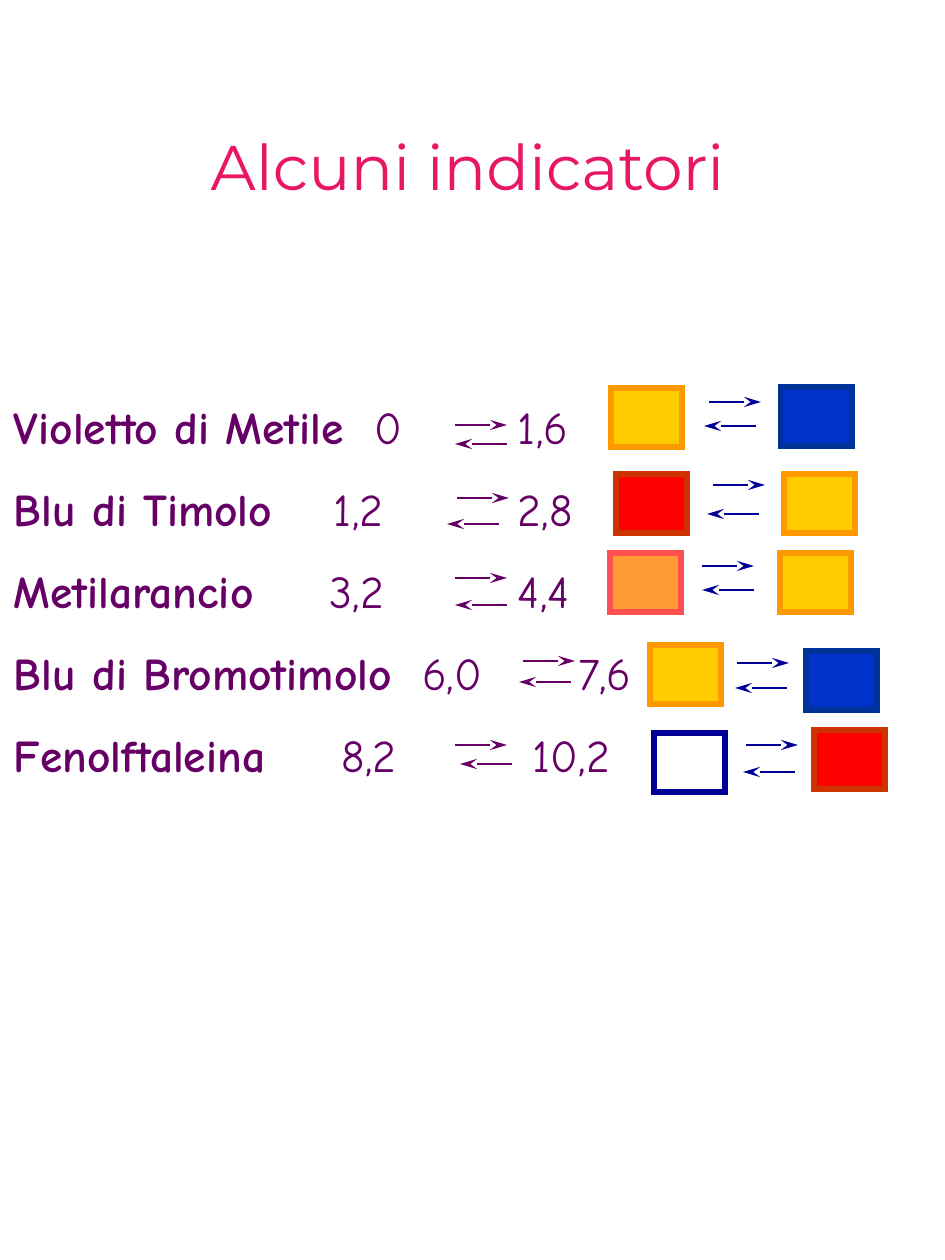
import dataclasses

import pptx
import pptx.dml.color
import pptx.enum.shapes
import pptx.enum.text
import pptx.oxml.ns
import pptx.util
from lxml import etree

EMU_PER_PX = 914400 / 126
BOX_SIZE = (71, 59)
ARROW_LENGTH = 52


@dataclasses.dataclass(frozen=True)
class Theme:
    title_font: str = "Montserrat"
    body_font: str = "Comic Neue"
    title_size: int = 36
    body_size: int = 26
    box_line: int = 3
    arrow_line: float = 0.75
    title: str = "E81766"
    body: str = "660066"
    color_arrow: str = "000099"


THEME = Theme()

SWATCHES = {
    "yellow": ("FFCC00", "FF9900"),
    "blue": ("0033CC", "003399"),
    "red": ("FF0000", "CC3300"),
    "orange": ("FF9933", "FF5050"),
    "colorless": (None, "000099"),
}


@dataclasses.dataclass(frozen=True)
class Indicator:
    name: str
    low_ph: str
    high_ph: str
    tabs: tuple
    ph_arrows: tuple
    acid: tuple
    base: tuple
    color_arrows: tuple


INDICATORS = [
    Indicator("Violetto di Metile", "0", "1,6", (361, 504), ((455, 425), (455, 444)),
              ("yellow", 611, 388), ("blue", 781, 387), ((709, 402), (704, 426))),
    Indicator("Blu di Timolo", "1,2", "2,8", (320, 504), ((457, 498), (447, 524)),
              ("red", 616, 474), ("yellow", 784, 474), ((713, 485), (707, 514))),
    Indicator("Metilarancio", "3,2", "4,4", (316, 504), ((455, 578), (455, 605)),
              ("orange", 610, 553), ("yellow", 780, 553), ((702, 566), (702, 590))),
    Indicator("Blu di Bromotimolo", "6,0", "7,6", (408, 564), ((523, 661), (519, 682)),
              ("yellow", 650, 645), ("blue", 806, 651), ((737, 663), (735, 688))),
    Indicator("Fenolftaleina", "8,2", "10,2", (328, 519), ((455, 745), (460, 764)),
              ("colorless", 654, 733), ("red", 814, 730), ((746, 745), (743, 772))),
]


def px(length):
    return pptx.util.Emu(round(length * EMU_PER_PX))


def rgb(value):
    return pptx.dml.color.RGBColor.from_string(value)


def add_element(parent, tag, **attributes):
    return etree.SubElement(parent, pptx.oxml.ns.qn(tag), **attributes)


def format_span(span, font, size, color, bold=False):
    span.font.name = font
    span.font.size = pptx.util.Pt(size)
    span.font.color.rgb = rgb(color)
    span.font.bold = bold


def format_line(shape, color, width):
    shape.line.color.rgb = rgb(color)
    shape.line.width = pptx.util.Pt(width)
    outline = shape._element.spPr.find(pptx.oxml.ns.qn("a:ln"))
    add_element(outline, "a:miter", lim="800000")
    return outline


def set_title(page, text):
    title = page.shapes.title
    title.left, title.top, title.width, title.height = map(px, (100, 121, 735, 89))
    frame = title.text_frame
    frame.text = text
    frame.word_wrap = False
    frame.vertical_anchor = pptx.enum.text.MSO_ANCHOR.MIDDLE
    para = frame.paragraphs[0]
    para.alignment = pptx.enum.text.PP_ALIGN.CENTER
    format_span(para.runs[0], THEME.title_font, THEME.title_size, THEME.title)


def set_tabs(para, positions):
    tabs = add_element(para._p.get_or_add_pPr(), "a:tabLst")
    for position in positions:
        add_element(tabs, "a:tab", pos=str(px(position)), algn="l")


def add_indicator_list(page, indicators):
    box = page.shapes.add_textbox(px(6), px(368), px(939), px(417))
    frame = box.text_frame
    frame.word_wrap = True
    frame.margin_left = frame.margin_right = px(8)
    frame.margin_top = frame.margin_bottom = px(4)
    for index, indicator in enumerate(indicators):
        para = frame.add_paragraph() if index else frame.paragraphs[0]
        para.line_spacing = 1.5
        set_tabs(para, indicator.tabs)
        values = f"\t{indicator.low_ph}\t{indicator.high_ph}"
        for text, bold in ((indicator.name, True), (values, False)):
            span = para.add_run()
            span.text = text
            format_span(span, THEME.body_font, THEME.body_size, THEME.body, bold)


def add_swatch(page, swatch, left, top):
    fill, line = SWATCHES[swatch]
    box = page.shapes.add_shape(
        pptx.enum.shapes.MSO_SHAPE.RECTANGLE, px(left), px(top), *map(px, BOX_SIZE))
    box.shadow.inherit = False
    if fill:
        box.fill.solid()
        box.fill.fore_color.rgb = rgb(fill)
    else:
        box.fill.background()
    format_line(box, line, THEME.box_line)


def add_arrow(page, start, end, y, color):
    arrow = page.shapes.add_connector(
        pptx.enum.shapes.MSO_CONNECTOR.STRAIGHT, px(start), px(y), px(end), px(y))
    outline = format_line(arrow, color, THEME.arrow_line)
    add_element(outline, "a:tailEnd", type="stealth", w="med", len="lg")
    add_element(arrow._element.spPr, "a:effectLst")


def add_equilibrium(page, arrows, color):
    (forward_left, forward_y), (back_left, back_y) = arrows
    add_arrow(page, forward_left, forward_left + ARROW_LENGTH, forward_y, color)
    add_arrow(page, back_left + ARROW_LENGTH, back_left, back_y, color)


def main():
    deck = pptx.Presentation()
    deck.slide_width, deck.slide_height = px(945), px(1260)
    page = deck.slides.add_slide(deck.slide_layouts[5])
    set_title(page, "Alcuni indicatori")
    add_indicator_list(page, INDICATORS)
    for indicator in INDICATORS:
        add_swatch(page, *indicator.acid)
        add_swatch(page, *indicator.base)
        add_equilibrium(page, indicator.ph_arrows, THEME.body)
        add_equilibrium(page, indicator.color_arrows, THEME.color_arrow)
    deck.save("out.pptx")


if __name__ == "__main__":
    main()
